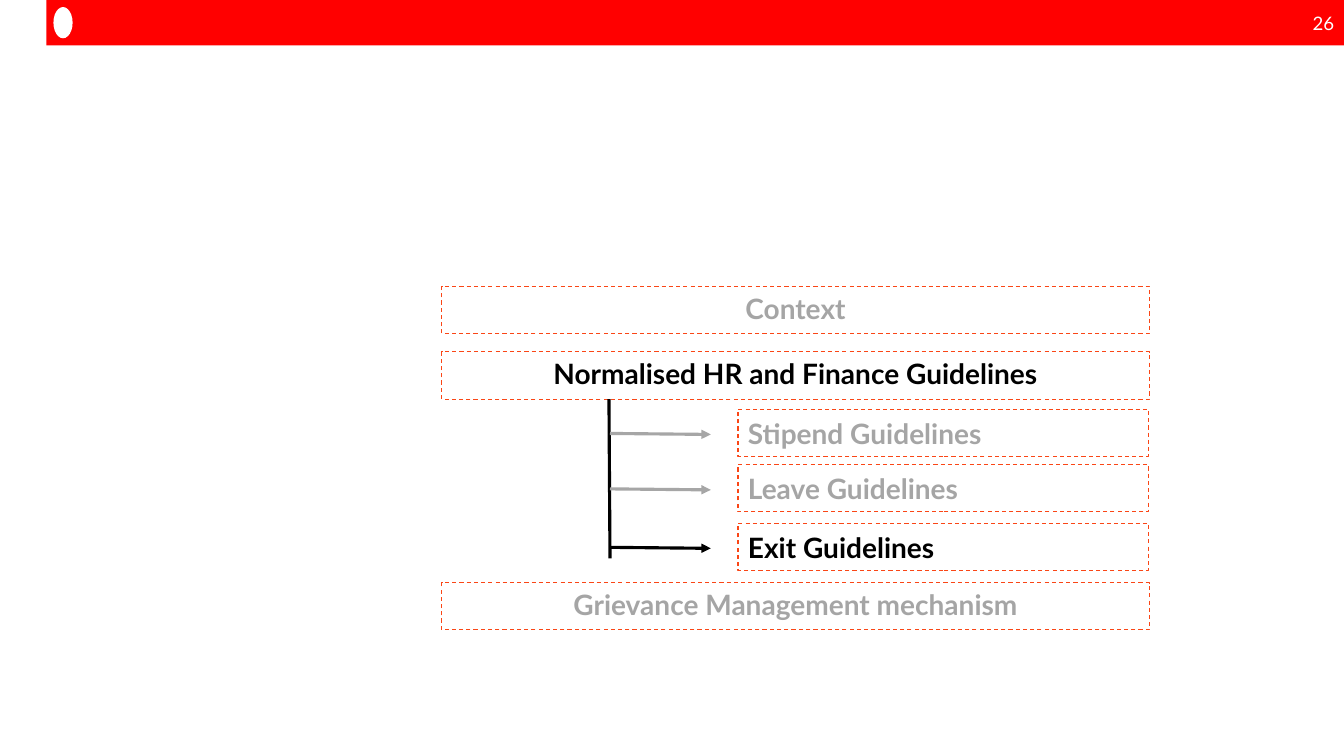
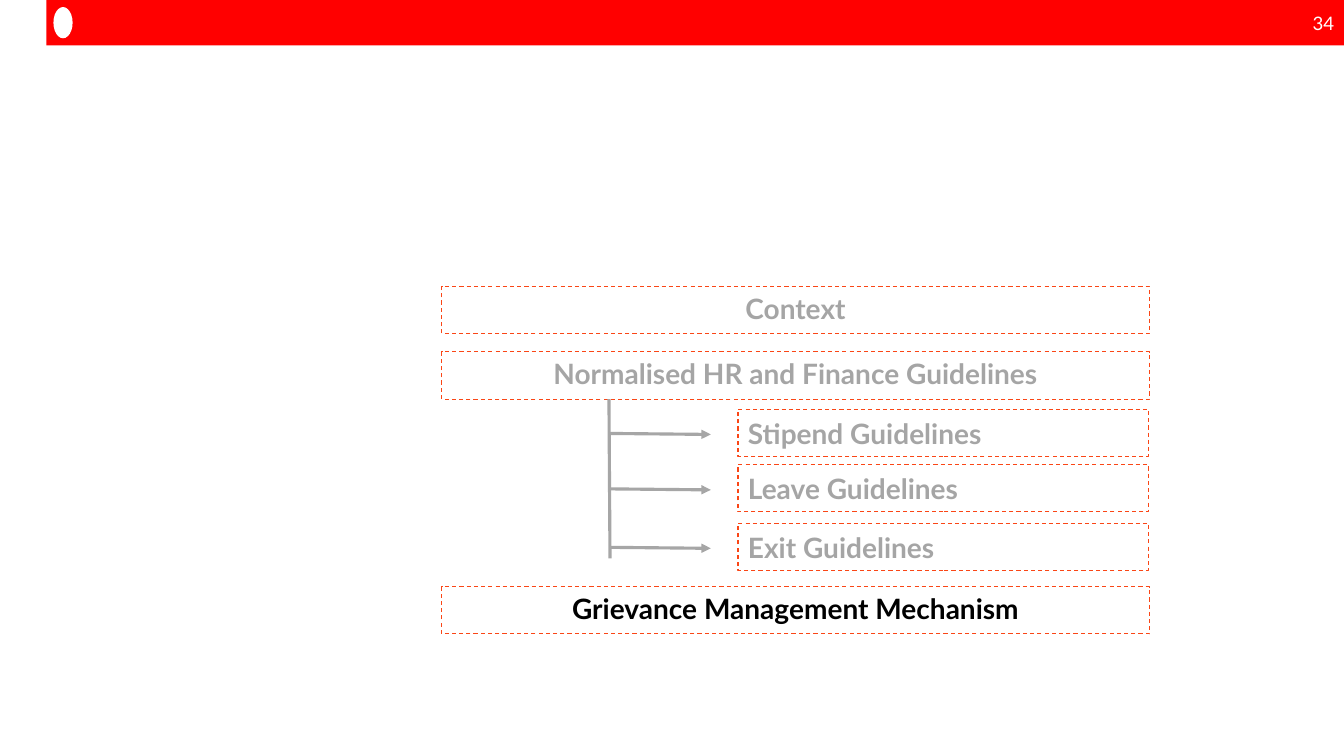
from dataclasses import dataclass

from lxml import etree
from pptx import Presentation
from pptx.dml.color import RGBColor
from pptx.enum.dml import MSO_LINE
from pptx.enum.shapes import MSO_CONNECTOR, MSO_SHAPE
from pptx.enum.text import MSO_ANCHOR, PP_ALIGN
from pptx.oxml.ns import qn
from pptx.util import Inches, Pt

RECT, OVAL = MSO_SHAPE.RECTANGLE, MSO_SHAPE.OVAL
STRAIGHT = MSO_CONNECTOR.STRAIGHT
DASH = MSO_LINE.DASH
MIDDLE = MSO_ANCHOR.MIDDLE
LEFT, CENTER, RIGHT = PP_ALIGN.LEFT, PP_ALIGN.CENTER, PP_ALIGN.RIGHT

WIDTH, HEIGHT = 13.33, 7.5
ROW_H = 0.47
MAIN_X, MAIN_W = 4.38, 7.02
SUB_X, SUB_W = 7.32, 4.07
STEM_X, STEM_END = 6.05, 5.54
ARROW_W, ARROW_DY = 1, 0.24
CONTEXT_Y, RULES_Y = 2.84, 3.49

CONTEXT = "Context"
RULES = "Normalised HR and Finance Guidelines"
SUBS = (
    ("Stipend Guidelines", 4.06),
    ("Leave Guidelines", 4.61),
    ("Exit Guidelines", 5.19),
)
AGENDAS = (
    (26, {RULES, "Exit Guidelines"}, "Grievance Management mechanism", 5.78),
    (34, {"Grievance Management Mechanism"}, "Grievance Management Mechanism", 5.82),
)


@dataclass(frozen=True)
class Theme:
    """Colours, font and sizes of the deck."""
    band: RGBColor = RGBColor(0xFF, 0x00, 0x00)
    white: RGBColor = RGBColor(0xFF, 0xFF, 0xFF)
    border: RGBColor = RGBColor(0xFA, 0x46, 0x16)
    active: RGBColor = RGBColor(0x00, 0x00, 0x00)
    muted: RGBColor = RGBColor(0xA5, 0xA5, 0xA5)
    faded: RGBColor = RGBColor(0xA6, 0xA6, 0xA6)
    font: str = "Lato"
    label: float = 20
    number: float = 13.3
    thin: float = 0.75
    thick: float = 2.25


class Deck:
    """Draws styled elements on the current slide."""

    def __init__(self, theme):
        """Open an empty deck."""
        self.theme = theme
        self.prs = Presentation()
        self.prs.slide_width = Inches(WIDTH)
        self.prs.slide_height = Inches(HEIGHT)
        self.slide = None

    def start(self, number):
        """Add a slide with its band, mark and number."""
        theme = self.theme
        self.slide = self.prs.slides.add_slide(self.prs.slide_layouts[6])
        self.block(RECT, 0.46, 0, 12.87, 0.45, theme.band)
        self.block(OVAL, 0.53, 0.07, 0.19, 0.31, theme.white)
        box = self.slide.shapes.add_textbox(
            Inches(12.84), Inches(0.06), Inches(0.49), Inches(0.33))
        self.text(box, str(number), theme.number, theme.white, RIGHT)

    def block(self, kind, x, y, w, h, fill=None):
        """Add a shape that is filled, or clear with a dashed border."""
        shape = self.slide.shapes.add_shape(
            kind, Inches(x), Inches(y), Inches(w), Inches(h))
        shape.shadow.inherit = False
        if fill is None:
            shape.fill.background()
            shape.line.color.rgb = self.theme.border
            shape.line.width = Pt(self.theme.thin)
            shape.line.dash_style = DASH
        else:
            shape.fill.solid()
            shape.fill.fore_color.rgb = fill
            shape.line.fill.background()
        return shape

    def text(self, shape, words, size, color, align, bold=False):
        """Set one styled line of text in a shape."""
        frame = shape.text_frame
        frame.word_wrap = True
        frame.vertical_anchor = MIDDLE
        para = frame.paragraphs[0]
        para.text = words
        para.alignment = align
        if align == CENTER:
            para.line_spacing = 0.9
        font = para.font
        font.name = self.theme.font
        font.size = Pt(size)
        font.bold = bold
        font.color.rgb = color

    def label(self, words, x, y, w, active, align=CENTER):
        """Add a dashed box with a bold label."""
        color = self.theme.active if active else self.theme.muted
        box = self.block(RECT, x, y, w, ROW_H)
        self.text(box, words, self.theme.label, color, align, True)

    def line(self, x1, y1, x2, y2, active, arrow=False):
        """Add a thick line, with an arrowhead if asked."""
        link = self.slide.shapes.add_connector(
            STRAIGHT, Inches(x1), Inches(y1), Inches(x2), Inches(y2))
        link.line.color.rgb = self.theme.active if active else self.theme.faded
        link.line.width = Pt(self.theme.thick)
        props = link._element.spPr
        if arrow:
            etree.SubElement(props.find(qn("a:ln")), qn("a:tailEnd"), type="triangle")
        etree.SubElement(props, qn("a:effectLst"))

    def agenda(self, number, active, last, last_y):
        """Build an agenda slide with the active topics in black."""
        self.start(number)
        self.label(CONTEXT, MAIN_X, CONTEXT_Y, MAIN_W, CONTEXT in active)
        self.label(RULES, MAIN_X, RULES_Y, MAIN_W, RULES in active)
        self.line(STEM_X - 0.01, RULES_Y + ROW_H, STEM_X, STEM_END, RULES in active)
        for words, y in SUBS:
            mid = y + ARROW_DY
            self.label(words, SUB_X, y, SUB_W, words in active, LEFT)
            self.line(STEM_X, mid, STEM_X + ARROW_W, mid + 0.01, words in active, True)
        self.label(last, MAIN_X, last_y, MAIN_W, last in active)


def main():
    """Build and save the deck."""
    deck = Deck(Theme())
    for item in AGENDAS:
        deck.agenda(*item)
    deck.prs.save("out.pptx")


if __name__ == "__main__":
    main()
